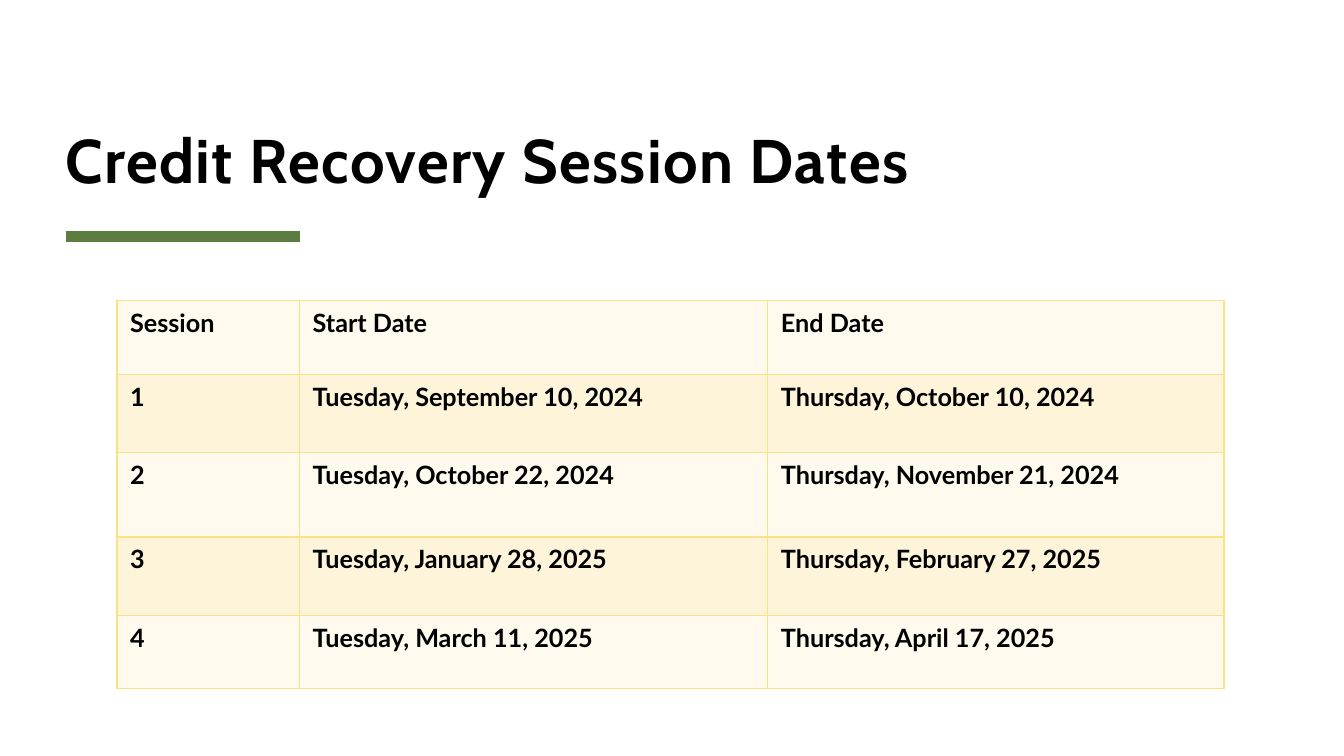
from dataclasses import dataclass
from lxml import etree
from pptx import Presentation
from pptx.dml.color import RGBColor
from pptx.enum.shapes import MSO_CONNECTOR
from pptx.enum.text import MSO_ANCHOR
from pptx.oxml import parse_xml
from pptx.oxml.ns import nsdecls, qn
from pptx.util import Inches, Pt

STRAIGHT = MSO_CONNECTOR.STRAIGHT
BOTTOM = MSO_ANCHOR.BOTTOM


@dataclass(frozen=True)
class Theme:
    ink: str = "000000"
    rule: str = "5D7D40"
    border: str = "FBE284"
    bands: tuple = ("FEFAED", "FDF4D9")
    head: str = "Cabin"
    body: str = "Lato"
    head_size: int = 44
    body_size: int = 18


THEME = Theme()
WIDTH, HEIGHT = 13.33, 7.5

# Column and row sizes as shares of the table box
COLS = (0.165, 0.423, 0.412)
ROWS = (0.19, 0.202, 0.218, 0.202, 0.188)
DATES = (
    ("Session", "Start Date", "End Date"),
    ("1", "Tuesday, September 10, 2024", "Thursday, October 10, 2024"),
    ("2", "Tuesday, October 22, 2024", "Thursday, November 21, 2024"),
    ("3", "Tuesday, January 28, 2025", "Thursday, February 27, 2025"),
    ("4", "Tuesday, March 11, 2025", "Thursday, April 17, 2025"),
)


def apply(target, values):
    for name, value in values.items():
        setattr(target, name, value)


def write(frame, text, face, size):
    run = frame.paragraphs[0].add_run()
    run.text = text
    apply(run.font, {"name": face, "size": Pt(size), "bold": True})
    run.font.color.rgb = RGBColor.from_string(THEME.ink)
    return run


def add_title(slide, box, text):
    frame = slide.shapes.add_textbox(*map(Inches, box)).text_frame
    apply(frame, {"word_wrap": True, "vertical_anchor": BOTTOM,
                  "margin_left": 0, "margin_right": 0,
                  "margin_top": 0, "margin_bottom": 0})
    frame.paragraphs[0].line_spacing = 0.8
    run = write(frame, text, THEME.head, THEME.head_size)
    run.font._element.set("spc", "100")


def add_rule(slide, box):
    left, top, width, height = box
    line = slide.shapes.add_connector(
        STRAIGHT, *map(Inches, (left, top, left + width, top + height)))
    line.line.color.rgb = RGBColor.from_string(THEME.rule)
    line.line.width = Pt(8)
    etree.SubElement(line._element.spPr, qn("a:effectLst"))


def add_border(cell):
    props = cell._tc.get_or_add_tcPr()
    for spot, side in enumerate("LRTB"):
        props.insert(spot, parse_xml(
            f'<a:ln{side} {nsdecls("a")} w="{Pt(1)}"><a:solidFill>'
            f'<a:srgbClr val="{THEME.border}"/></a:solidFill></a:ln{side}>'))


def add_dates(slide, box, data):
    left, top, width, height = box
    table = slide.shapes.add_table(
        len(ROWS), len(COLS), *map(Inches, box)).table
    apply(table, {"first_row": False, "horz_banding": False})
    for col, share in zip(table.columns, COLS):
        col.width = Inches(width * share)
    for row, share in zip(table.rows, ROWS):
        row.height = Inches(height * share)

    # Cells in alternating bands
    for r, line in enumerate(data):
        for c, text in enumerate(line):
            cell = table.cell(r, c)
            apply(cell, {"margin_left": Inches(0.13),
                         "margin_right": Inches(0.13),
                         "margin_top": Inches(0.07),
                         "margin_bottom": Inches(0.07)})
            cell.fill.solid()
            cell.fill.fore_color.rgb = RGBColor.from_string(THEME.bands[r % 2])
            add_border(cell)
            write(cell.text_frame, text, THEME.body, THEME.body_size)


def main():
    deck = Presentation()
    apply(deck, {"slide_width": Inches(WIDTH), "slide_height": Inches(HEIGHT)})
    slide = deck.slides.add_slide(deck.slide_layouts[6])
    edge = 0.65
    add_rule(slide, (edge, 2.35, 2.33, 0))
    add_title(slide, (edge, 0.22, 12, 1.72), "Credit Recovery Session Dates")
    add_dates(slide, (1.16, 2.98, 10.98, 3.85), DATES)
    deck.save("out.pptx")


if __name__ == "__main__":
    main()
